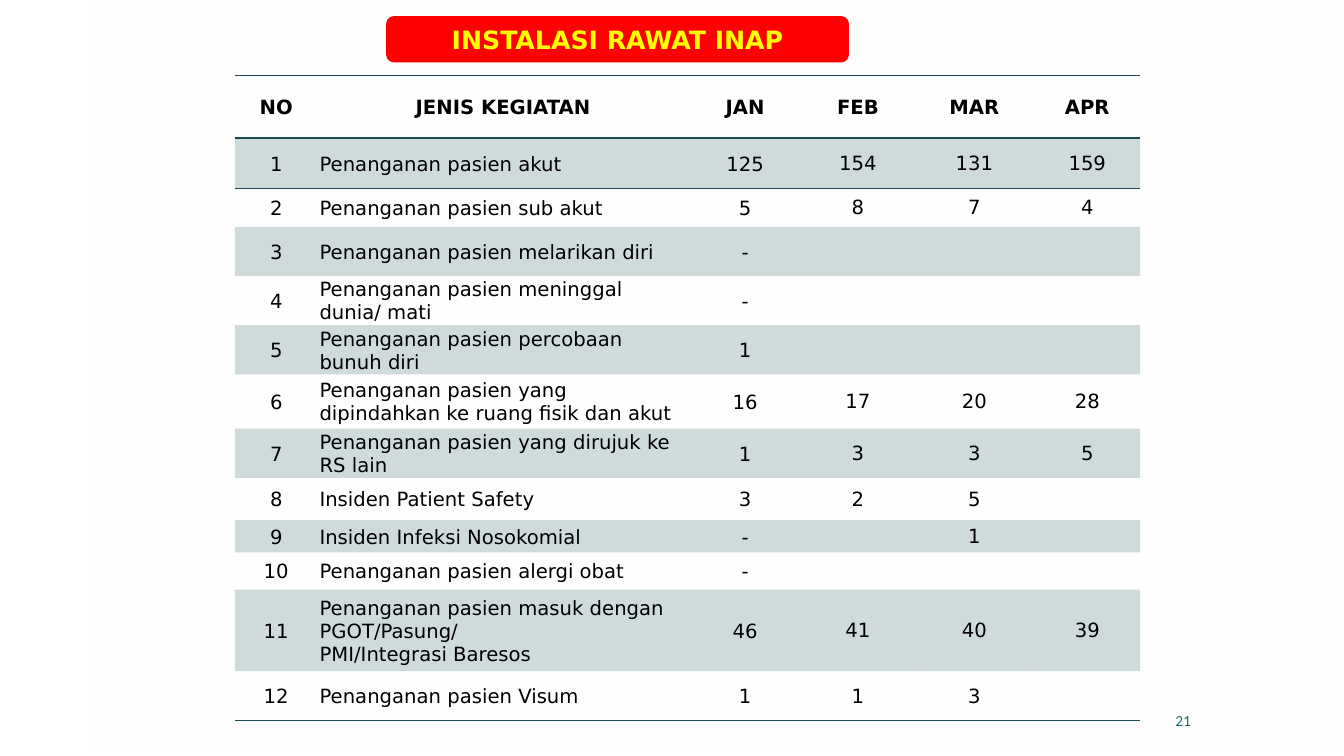
from lxml.etree import SubElement
from pptx import Presentation
from pptx.dml.color import RGBColor
from pptx.enum.shapes import MSO_SHAPE as Shape
from pptx.enum.text import MSO_ANCHOR as Anchor, PP_ALIGN as Align
from pptx.oxml.ns import qn
from pptx.util import Inches, Pt

COLUMNS = [0.82, 3.68, 1.12, 1.12, 1.19, 1.05]
ROW_HEIGHTS = [0.62, 0.5, 0.38, 0.49, 0.38, 0.37, 0.54,
               0.37, 0.42, 0.32, 0.37, 0.81, 0.49]
HEADINGS = ["NO", "JENIS KEGIATAN", "JAN", "FEB", "MAR", "APR"]
ACTIVITIES = [
    ("Penanganan pasien akut", "125", "154", "131", "159"),
    ("Penanganan pasien sub akut", "5", "8", "7", "4"),
    ("Penanganan pasien melarikan diri", "-", "", "", ""),
    ("Penanganan pasien meninggal dunia/ mati", "-", "", "", ""),
    ("Penanganan pasien percobaan bunuh diri", "1", "", "", ""),
    ("Penanganan pasien yang dipindahkan ke ruang fisik dan akut",
     "16", "17", "20", "28"),
    ("Penanganan pasien yang dirujuk ke RS lain", "1", "3", "3", "5"),
    ("Insiden Patient Safety", "3", "2", "5", ""),
    ("Insiden Infeksi Nosokomial", "-", "", "1", ""),
    ("Penanganan pasien alergi obat", "-", "", "", ""),
    ("Penanganan pasien masuk dengan PGOT/Pasung/\nPMI/Integrasi Baresos",
     "46", "41", "40", "39"),
    ("Penanganan pasien Visum", "1", "1", "3", ""),
]
NO_TABLE_STYLE = "{2D5ABB26-0587-4C30-8999-92F81FD0307C}"


def rgb(value):
    return RGBColor.from_string(value)


def set_alpha(fill_xml, percents):
    for color, percent in zip(fill_xml.iter(qn("a:srgbClr")), percents):
        SubElement(color, qn("a:alpha"), val=str(percent * 1000))


class WardSlide:
    font = "DejaVu Sans"
    teal = "164B4F"

    def __init__(self, slide):
        self.shapes = slide.shapes

    def add_text(self, frame, text, size, color, align, bold=False, font=None):
        paragraph = frame.paragraphs[0]
        paragraph.alignment = align
        for index, line in enumerate(text.split("\n")):
            if index:
                paragraph.add_line_break()
            run = paragraph.add_run()
            run.text = line
            run.font.name = font or self.font
            run.font.size = Pt(size)
            run.font.bold = bold
            run.font.color.rgb = rgb(color)

    def box(self, kind, *place):
        shape = self.shapes.add_shape(kind, *map(Inches, place))
        shape.shadow.inherit = False
        shape.line.fill.background()
        return shape

    def veil(self, *place):
        panel = self.box(Shape.RECTANGLE, *place)
        panel.fill.gradient()
        panel.fill.gradient_angle = 270
        for stop in panel.fill.gradient_stops:
            stop.color.rgb = rgb("FFFFFF")
        set_alpha(panel._element.spPr.find(qn("a:gradFill")), [60, 0])

    def title(self, text, *place):
        banner = self.box(Shape.ROUNDED_RECTANGLE, *place)
        banner.fill.solid()
        banner.fill.fore_color.rgb = rgb("FF0000")
        banner.text_frame.vertical_anchor = Anchor.MIDDLE
        self.add_text(banner.text_frame, text, 18, "FFFF00", Align.CENTER, True)

    def page_number(self, text, *place):
        frame = self.shapes.add_textbox(*map(Inches, place)).text_frame
        frame.word_wrap = True
        frame.vertical_anchor = Anchor.MIDDLE
        self.add_text(frame, text, 11, "1F696F", Align.RIGHT, font="Calibri")

    def border(self, cell, side):
        line = SubElement(cell._tc.get_or_add_tcPr(), qn("a:" + side), w=str(Pt(1)))
        fill = SubElement(line, qn("a:solidFill"))
        SubElement(fill, qn("a:srgbClr"), val=self.teal)

    def cell(self, cell, text, align, bold, shaded, margin, borders):
        cell.vertical_anchor = Anchor.MIDDLE
        cell.margin_left = cell.margin_right = cell.margin_top = Inches(margin)
        cell.margin_bottom = 0
        for side in borders:
            self.border(cell, side)
        if shaded:
            cell.fill.solid()
            cell.fill.fore_color.rgb = rgb(self.teal)
            set_alpha(cell._tc.tcPr.find(qn("a:solidFill")), [20])
        else:
            cell.fill.background()
        if text:
            self.add_text(cell.text_frame, text, 14, "000000", align, bold)
        else:
            # Keep an empty cell from stretching its row
            SubElement(cell.text_frame.paragraphs[0]._p, qn("a:endParaRPr"), sz="1400")

    def table(self, rows, left, top):
        frame = self.shapes.add_table(
            len(rows), len(COLUMNS), Inches(left), Inches(top),
            Inches(sum(COLUMNS)), Inches(sum(ROW_HEIGHTS)))
        table = frame.table
        table.first_row = table.horz_banding = False
        table._tbl.tblPr.find(qn("a:tableStyleId")).text = NO_TABLE_STYLE
        for column, width in zip(table.columns, COLUMNS):
            column.width = Inches(width)
        for row, height in zip(table.rows, ROW_HEIGHTS):
            row.height = Inches(height)
        edges = {0: ["lnT", "lnB"], 1: ["lnT"], len(rows) - 1: ["lnB"]}
        for r, row in enumerate(rows):
            for c, text in enumerate(row):
                align = Align.LEFT if r and c == 1 else Align.CENTER
                margin = 0.01 if r and c > 2 else 0.02
                self.cell(table.cell(r, c), text, align, r == 0, r % 2 == 1,
                          margin, edges.get(r, []))


def main():
    deck = Presentation()
    deck.slide_width, deck.slide_height = Inches(13.33), Inches(7.5)
    ward = WardSlide(deck.slides.add_slide(deck.slide_layouts[6]))

    # Background and page number
    ward.veil(0.91, 0, 12.41, 7.5)
    ward.page_number("21", 8.8, 6.95, 3.11, 0.4)

    # Title and monthly activity table
    ward.title("INSTALASI RAWAT INAP", 3.83, 0.16, 4.59, 0.46)
    numbered = [(str(n), *row) for n, row in enumerate(ACTIVITIES, 1)]
    ward.table([HEADINGS, *numbered], 2.33, 0.75)

    deck.save("out.pptx")


if __name__ == "__main__":
    main()
